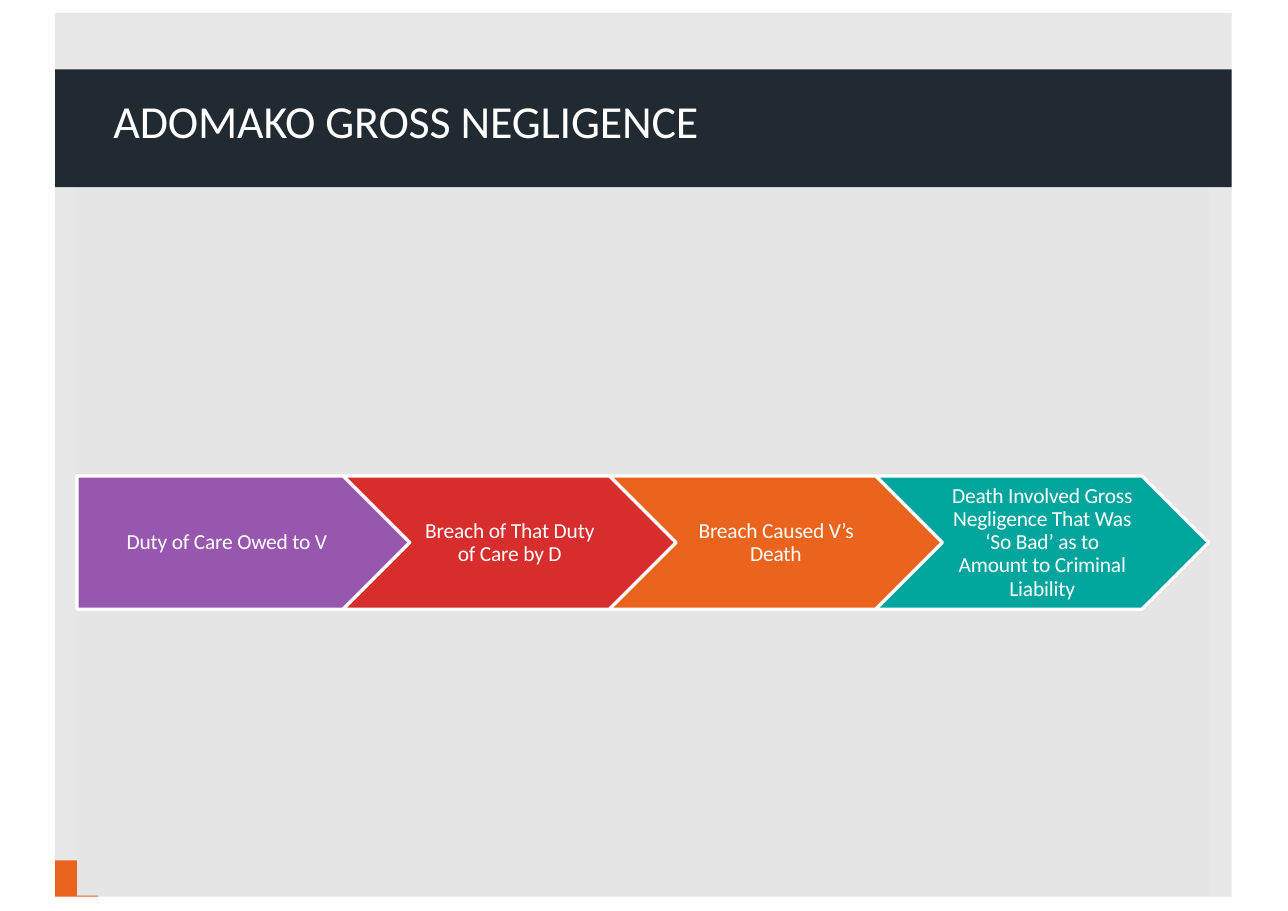
from lxml.etree import SubElement
from pptx import Presentation
from pptx.dml.color import RGBColor
from pptx.enum.shapes import MSO_SHAPE as Shape
from pptx.enum.text import MSO_ANCHOR as Anchor, PP_ALIGN as Align
from pptx.oxml.ns import qn
from pptx.util import Inches, Pt

WHITE = "FFFFFF"
ORANGE = "EB641E"
STEPS = [
    ("Duty of Care Owed to V", "9857AE"),
    ("Breach of That Duty of Care by D", "D72D2D"),
    ("Breach Caused V’s Death", ORANGE),
    ("Death Involved Gross Negligence That Was ‘So Bad’ as to "
     "Amount to Criminal Liability", "00A69E"),
]


def color(value):
    return RGBColor.from_string(value)


def add_block(slide, box, fill, kind=Shape.RECTANGLE, line=None, opacity=None):
    """Add a flat preset shape; opacity is in percent."""
    shape = slide.shapes.add_shape(kind, *(Inches(length) for length in box))
    shape.shadow.inherit = False
    shape.fill.solid()
    shape.fill.fore_color.rgb = color(fill)
    if opacity is not None:
        rgb = shape._element.spPr.find(".//" + qn("a:srgbClr"))
        SubElement(rgb, qn("a:alpha"), val=str(opacity * 1000))
    if line:
        shape.line.color.rgb = color(line)
        shape.line.width = Pt(2.14)
    else:
        shape.line.fill.background()
    return shape


def write_text(shape, text, size, margins, align=Align.CENTER,
               anchor=Anchor.MIDDLE, line_spacing=None, tracking=0):
    """Fill a shape with one paragraph; margins are left, top, right, bottom."""
    frame = shape.text_frame
    frame.word_wrap = True
    frame.vertical_anchor = anchor
    (frame.margin_left, frame.margin_top,
     frame.margin_right, frame.margin_bottom) = map(Inches, margins)
    paragraph = frame.paragraphs[0]
    paragraph.alignment = align
    if line_spacing:
        paragraph.line_spacing = Pt(line_spacing)
    run = paragraph.add_run()
    run.text = text
    run.font.name = "Calibri"
    run.font.size = Pt(size)
    run.font.color.rgb = color(WHITE)
    run._r.get_or_add_rPr().set("spc", str(round(tracking * 100)))


def add_backdrop(slide, left, top, width, height):
    add_block(slide, (left, top, width, height), "171D23", opacity=10)


def add_title_bar(slide, left, top, width, height):
    bar = add_block(slide, (left, top, width, height), "202A30")
    write_text(bar, "ADOMAKO GROSS NEGLIGENCE", 30, (0.53, 0.21, 0, 0),
               align=Align.LEFT, anchor=Anchor.TOP, tracking=-0.12)


def add_content_panel(slide, left, top, width, height):
    """Add the grey panel with an orange tab showing behind its lower left."""
    add_block(slide, (left - 0.2, top + height - 0.32, 0.39, 0.33), ORANGE)
    add_block(slide, (left, top, width, height), "E5E5E5")


def add_process(slide, left, top, width, height):
    """Add a row of arrows, each nested into the point of the one before."""
    point = height / 2
    pitch = (width - point) / len(STEPS)
    for index, (text, fill) in enumerate(STEPS):
        kind = Shape.CHEVRON if index else Shape.PENTAGON
        box = (left + index * pitch, top, pitch + point, height)
        arrow = add_block(slide, box, fill, kind, line=WHITE)
        arrow.adjustments[0] = 0.5
        write_text(arrow, text, 14, (0.07, 0, 0.07, 0),
                   line_spacing=15.1, tracking=-0.15)


def main():
    presentation = Presentation()
    presentation.slide_width = Inches(11.69)
    presentation.slide_height = Inches(8.27)
    slide = presentation.slides.add_slide(presentation.slide_layouts[6])
    add_backdrop(slide, 0.5, 0.12, 10.68, 8.02)
    add_title_bar(slide, 0.5, 0.63, 10.68, 1.07)
    add_content_panel(slide, 0.7, 1.71, 10.27, 6.42)
    add_process(slide, 0.7, 4.32, 10.27, 1.21)
    presentation.save("out.pptx")


if __name__ == "__main__":
    main()
